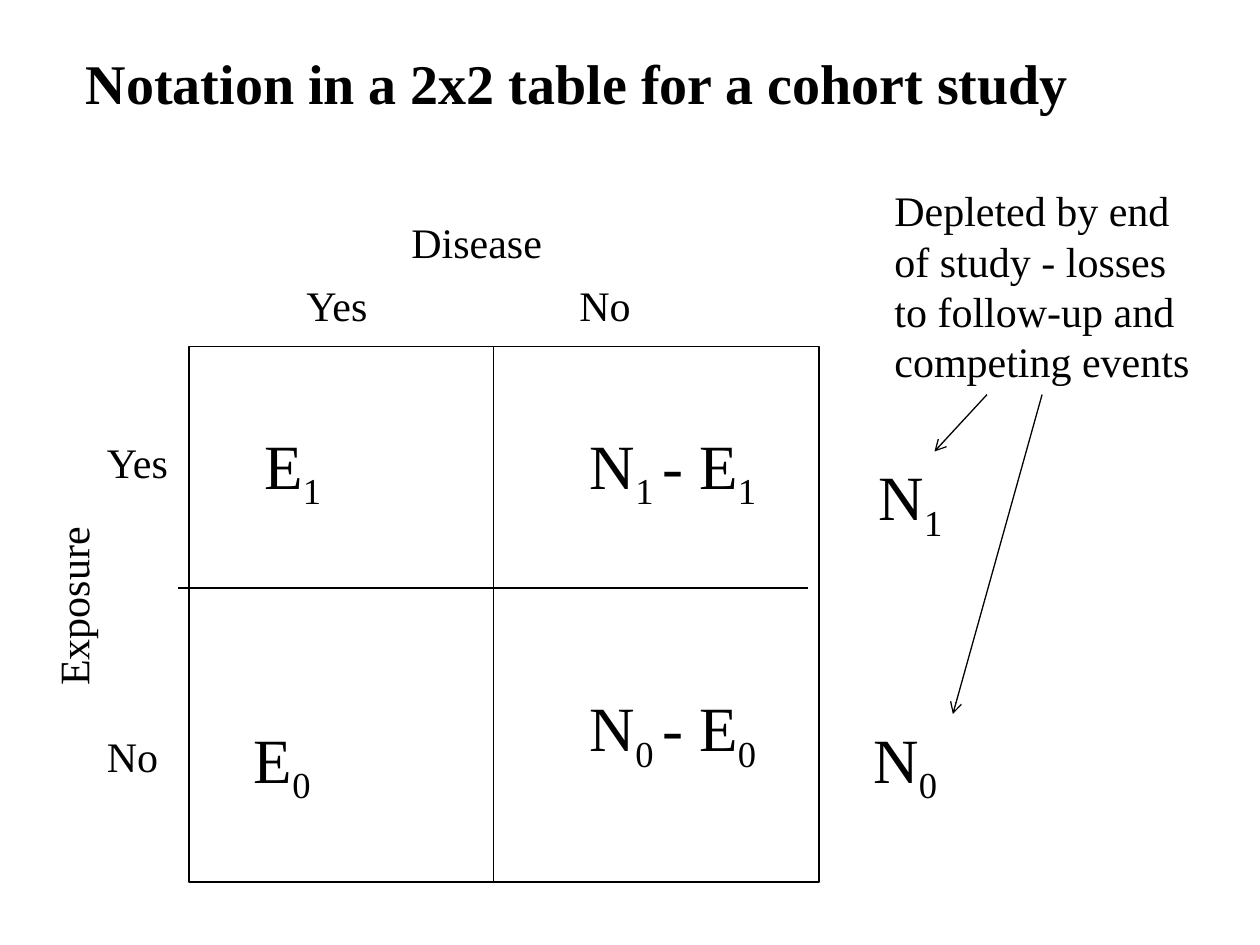
import pptx
import pptx.util
import pptx.dml.color
import pptx.enum.shapes
import pptx.enum.text
import pptx.oxml
import pptx.oxml.ns

Pt = pptx.util.Pt
THEME = {
    "font": "Times New Roman",
    "ink": pptx.dml.color.RGBColor(0, 0, 0),
    "title": 32,
    "label": 24,
    "symbol": 36,
    "line": 0.75,
}

TITLE = ("Notation in a 2x2 table for a cohort study", (30, 24, 600, 46))
NOTE = ("Depleted by end of study - losses to follow-up and competing events",
        (504, 102, 192, 124))
DISEASE = ("Disease", (228, 120, 126, 36))
EXPOSURE = ("Exposure", (-11, 328.5, 105, 36))
ANSWERS = {"Yes": 52, "No": 44}
COLUMN_LABELS = [("Yes", 168, 156), ("No", 324, 156)]
ROW_LABELS = [("Yes", 54, 246), ("No", 54, 414)]

# Spans alternate between normal and subscript.
SYMBOLS = [
    (("E", "1"), (144, 240, 48, 50)),
    (("N", "1 ", "- E", "1"), (330, 240, 114, 50)),
    ((" N", "1"), (486, 258, 61, 50)),
    (("E", "0"), (138, 408, 48, 50)),
    (("N", "0 ", "- E", "0"), (330, 390, 114, 50)),
    (("N", "0"), (492, 408, 52.5, 50)),
]

FRAME = (108, 198, 360, 306)
DIVIDERS = [((282, 198), (282, 504)), ((102, 336), (462, 336))]
ARROWS = [((595.5, 225.5), (544.5, 408)), ((564, 225.5), (534, 258))]


def style_text(frame, size, bold=False):
    for para in frame.paragraphs:
        for span in para.runs:
            span.font.name = THEME["font"]
            span.font.size = Pt(size)
            span.font.bold = bold
            span.font.color.rgb = THEME["ink"]


def add_text(slide, spans, place, size, wrap=False):
    box = slide.shapes.add_textbox(*map(Pt, place))
    frame = box.text_frame
    frame.word_wrap = wrap
    for index, text in enumerate(spans):
        span = frame.paragraphs[0].add_run()
        span.text = text
        if index % 2:
            span.font._element.set("baseline", "-25000")
    style_text(frame, size)
    return box


def add_line(slide, start, end, arrow=False):
    line = slide.shapes.add_connector(
        pptx.enum.shapes.MSO_CONNECTOR.STRAIGHT, *map(Pt, start + end))
    line.line.color.rgb = THEME["ink"]
    line.line.width = Pt(THEME["line"])
    if arrow:
        tip = pptx.oxml.parse_xml(
            '<a:tailEnd %s type="arrow"/>' % pptx.oxml.ns.nsdecls("a"))
        line.line._get_or_add_ln().append(tip)
    line._element.spPr.append(pptx.oxml.parse_xml(
        "<a:effectLst %s/>" % pptx.oxml.ns.nsdecls("a")))


def add_title(slide, text, place):
    title = slide.shapes.title
    title.left, title.top, title.width, title.height = map(Pt, place)
    frame = title.text_frame
    frame.text = text
    frame.word_wrap = True
    frame.auto_size = pptx.enum.text.MSO_AUTO_SIZE.NONE
    frame.vertical_anchor = pptx.enum.text.MSO_ANCHOR.TOP
    frame.paragraphs[0].alignment = pptx.enum.text.PP_ALIGN.CENTER
    style_text(frame, THEME["title"], bold=True)


def add_frame(slide):
    frame = slide.shapes.add_shape(
        pptx.enum.shapes.MSO_SHAPE.RECTANGLE, *map(Pt, FRAME))
    frame.shadow.inherit = False
    frame.fill.background()
    frame.line.color.rgb = THEME["ink"]
    frame.line.width = Pt(THEME["line"])


def main():
    deck = pptx.Presentation()
    deck.slide_width, deck.slide_height = Pt(720), Pt(540)
    slide = deck.slides.add_slide(deck.slide_layouts.get_by_name("Title Only"))

    add_frame(slide)
    add_title(slide, *TITLE)
    for text, left, top in COLUMN_LABELS + ROW_LABELS:
        add_text(slide, [text], (left, top, ANSWERS[text], 36), THEME["label"])
    for text, place in (DISEASE, NOTE):
        add_text(slide, [text], place, THEME["label"], wrap=True)
    exposure = add_text(slide, [EXPOSURE[0]], EXPOSURE[1], THEME["label"])
    exposure.rotation = 270
    for spans, place in SYMBOLS:
        add_text(slide, spans, place, THEME["symbol"])
    for start, end in DIVIDERS:
        add_line(slide, start, end)
    for start, end in ARROWS:
        add_line(slide, start, end, arrow=True)

    deck.save("out.pptx")


if __name__ == "__main__":
    main()
